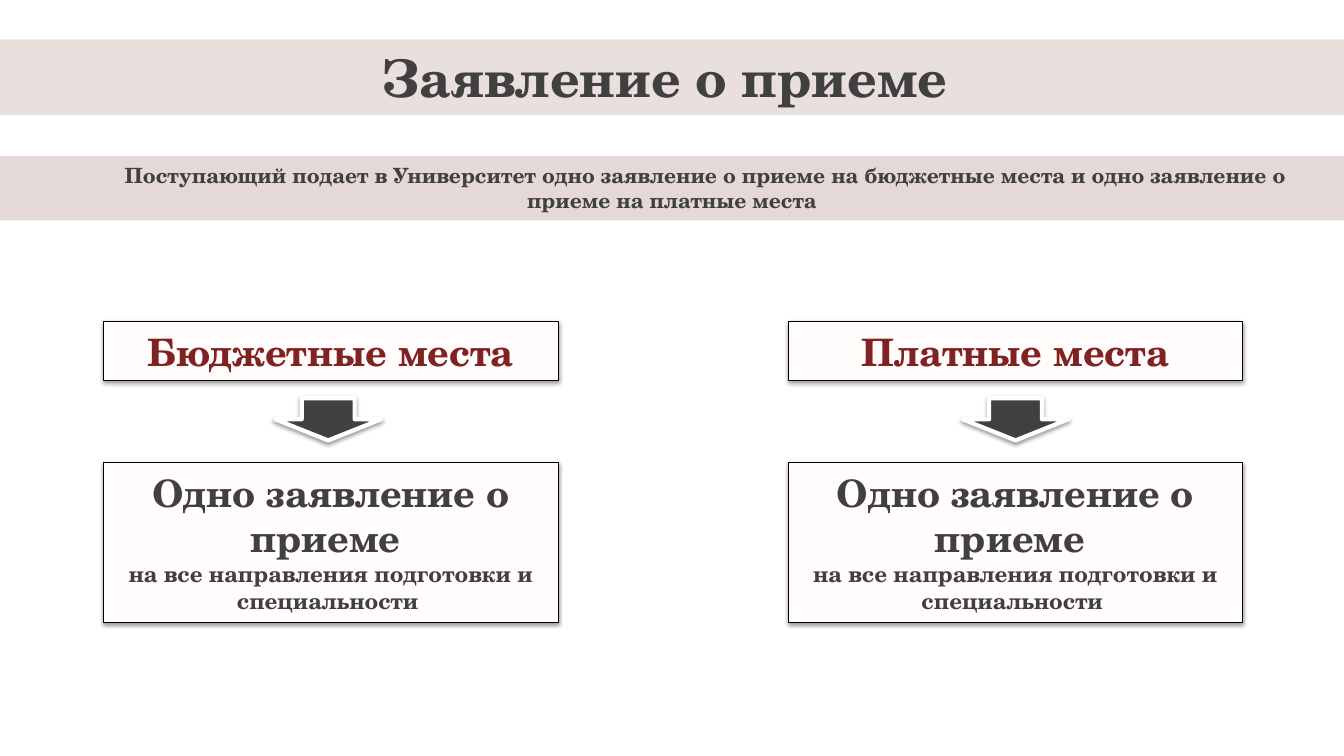
import pptx
import pptx.util
import pptx.dml.color
import pptx.enum.shapes
import pptx.enum.text
import pptx.oxml
import pptx.oxml.ns

Pt = pptx.util.Pt
Kind = pptx.enum.shapes.MSO_SHAPE
Anchor = pptx.enum.text.MSO_ANCHOR
qn = pptx.oxml.ns.qn

DARK, RED, BAND, PALE = "404040", "802222", "591300", "FFFCFB"
SPACE = pptx.oxml.ns.nsdecls("a")
SHADOW = (
    f'<a:outerShdw {SPACE} blurRad="{Pt(3.1)}" '
    f'dist="{Pt(1.6)}" dir="5400000" algn="t" rotWithShape="0">'
    '<a:srgbClr val="000000"><a:alpha val="38000"/></a:srgbClr></a:outerShdw>'
)


def color(code):
    return pptx.dml.color.RGBColor.from_string(code)


class Page:
    def __init__(self, slide, face):
        self.slide = slide
        self.face = face

    def label(self, shape, lines, anchor=Anchor.TOP):
        """Fill the shape with centred bold lines of (text, size, colour)."""
        frame = shape.text_frame
        frame.word_wrap = True
        frame.auto_size = pptx.enum.text.MSO_AUTO_SIZE.NONE
        frame.vertical_anchor = anchor
        frame.margin_left = frame.margin_right = Pt(9.6)
        frame.margin_top = frame.margin_bottom = Pt(4.8)
        for i, (text, size, tint) in enumerate(lines):
            para = frame.paragraphs[0] if i == 0 else frame.add_paragraph()
            para.text = text
            para.alignment = pptx.enum.text.PP_ALIGN.CENTER
            para.font.name = self.face
            para.font.size = Pt(size)
            para.font.bold = True
            para.font.color.rgb = color(tint)

    def tint(self, shape, alpha):
        """Give the shape a see-through band fill without a line."""
        shape.fill.solid()
        shape.fill.fore_color.rgb = color(BAND)
        node = shape._element.spPr.find(qn("a:solidFill"))[0]
        node.append(pptx.oxml.parse_xml(
            f'<a:alpha {SPACE} val="{alpha * 1000}"/>'))
        shape.line.fill.background()

    def title(self, text, top, height):
        shape = self.slide.shapes.title
        shape.left, shape.top = Pt(0), Pt(top)
        shape.width, shape.height = Pt(960), Pt(height)
        self.tint(shape, 13)
        self.label(shape, [(text, 37, DARK)], Anchor.MIDDLE)

    def band(self, text, top, height):
        shape = self.slide.shapes.add_shape(
            Kind.RECTANGLE, Pt(0), Pt(top), Pt(960), Pt(height))
        shape.shadow.inherit = False
        self.tint(shape, 16)
        self.label(shape, [(text, 15, DARK)])
        props = shape.text_frame.paragraphs[0]._p.get_or_add_pPr()
        props.set("indent", str(Pt(48)))

    def block(self, kind, left, top, width, height, fill, line, weight):
        """Add a filled, outlined shape with a soft shadow below."""
        shape = self.slide.shapes.add_shape(
            kind, Pt(left), Pt(top), Pt(width), Pt(height))
        shape.fill.solid()
        shape.fill.fore_color.rgb = color(fill)
        shape.line.color.rgb = color(line)
        shape.line.width = Pt(weight)
        shape.shadow.inherit = False
        effects = shape._element.spPr.find(qn("a:effectLst"))
        effects.append(pptx.oxml.parse_xml(SHADOW))
        return shape

    def card(self, left, top, height, lines):
        shape = self.block(Kind.RECTANGLE, left, top, 324.8, height,
                           PALE, "000000", 0.75)
        self.label(shape, lines)

    def arrow(self, left, top):
        self.block(Kind.DOWN_ARROW, left, top, 75.6, 30.2, DARK, "FFFFFF", 3)


def main():
    deck = pptx.Presentation()
    deck.slide_width, deck.slide_height = Pt(960), Pt(540)
    page = Page(deck.slides.add_slide(deck.slide_layouts[5]),
                "TeX Gyre Schola")

    page.title("Заявление о приеме ", 28.1, 54)
    page.band("Поступающий подает в Университет одно заявление о приеме "
              "на бюджетные места и одно заявление о приеме на платные места",
              111.4, 46)

    claim = [("Одно заявление о приеме ", 27, DARK),
             ("на все направления подготовки и специальности ", 16, DARK)]
    for left, tip, name in ((74, 196.6, "Бюджетные места"),
                            (563, 687.6, "Платные места")):
        page.card(left, 229.7, 41.8, [(name, 27, RED)])
        page.arrow(tip, 284.4)
        page.card(left, 330.5, 114, claim)

    deck.save("out.pptx")


if __name__ == "__main__":
    main()
